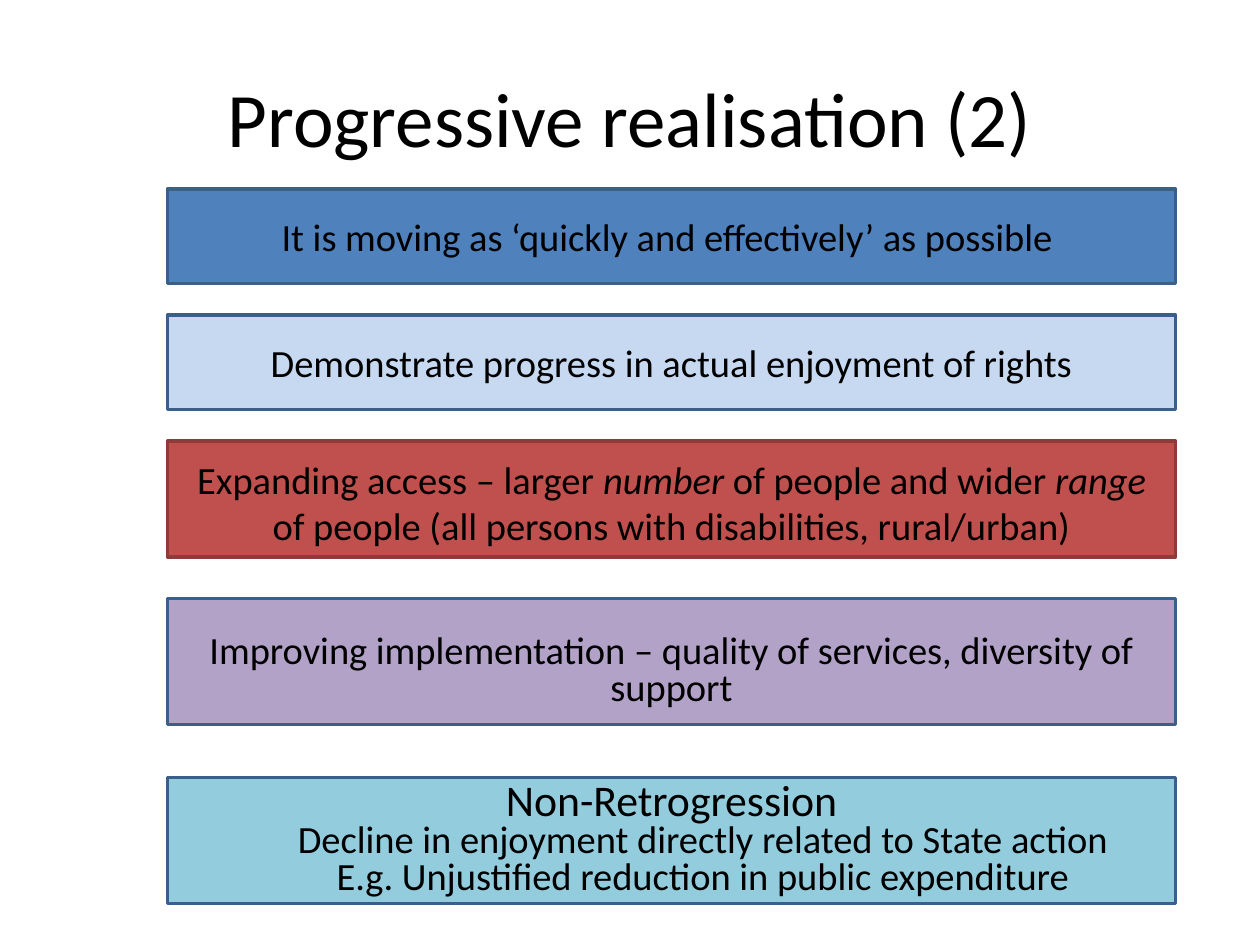
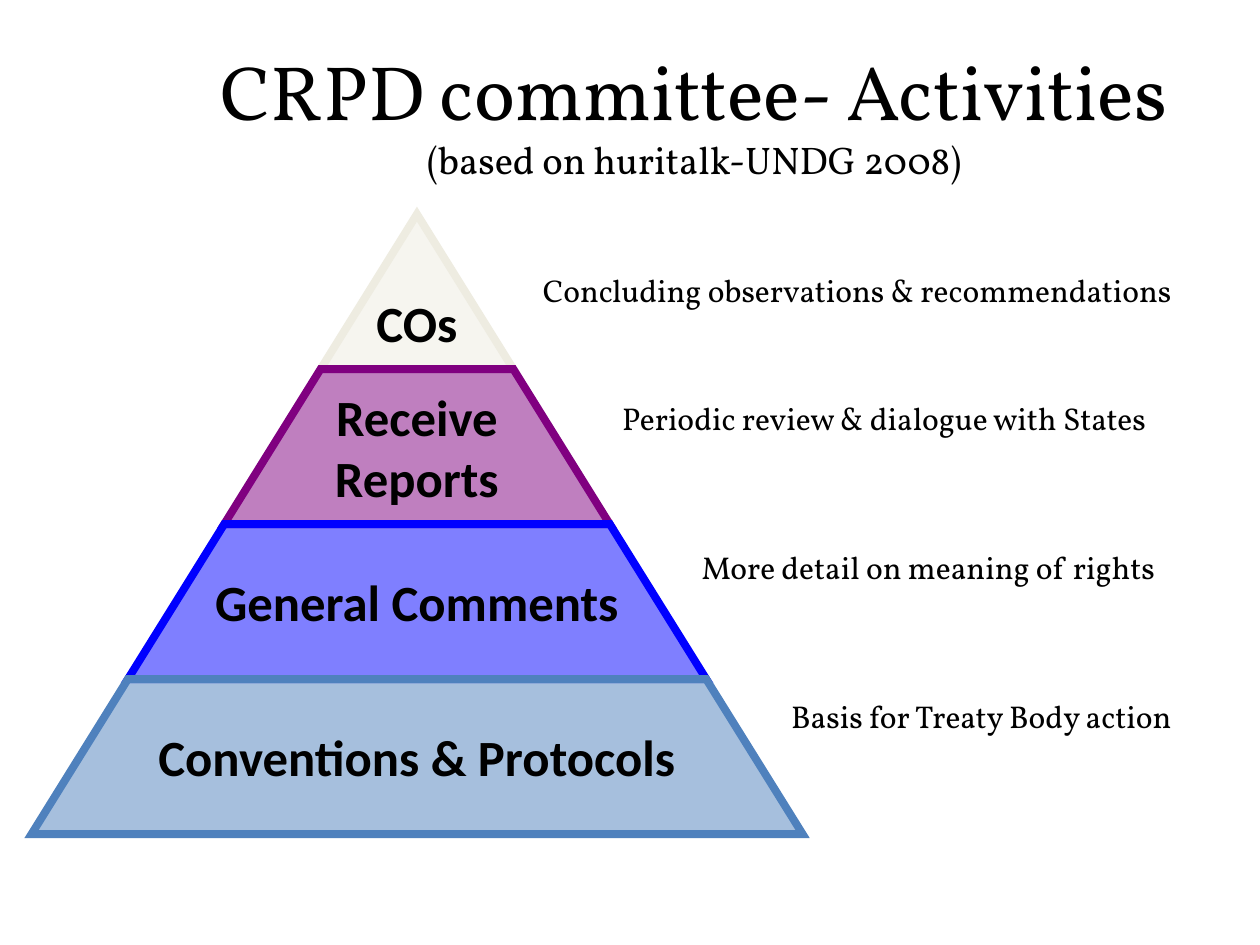
from lxml.etree import SubElement
from pptx import Presentation
from pptx.dml.color import RGBColor
from pptx.enum.shapes import MSO_SHAPE as Preset
from pptx.enum.text import MSO_ANCHOR as Anchor, PP_ALIGN as Align
from pptx.oxml.ns import qn
from pptx.util import Inches, Pt

COLORS = {
    "text": "000000", "blue": "4F81BD", "pale blue": "C6D9F1", "red": "C0504D",
    "purple": "B3A2C7", "aqua": "93CDDD", "blue edge": "3A5F8C", "red edge": "8E3B39",
    "ivory": "EEECE1", "plum": "800080", "bright blue": "0000FF",
}
SANS, SERIF = "Calibri", "Vollkorn"


class Deck:
    """Holds the shared style and the slide being filled."""

    def __init__(self):
        self.presentation = Presentation()
        self.presentation.slide_width = Inches(10)
        self.presentation.slide_height = Inches(7.5)
        self.slide = None

    def new_slide(self):
        self.slide = self.presentation.slides.add_slide(self.presentation.slide_layouts[6])

    def color(self, name):
        return RGBColor.from_string(COLORS[name])

    def fill_text(self, shape, paragraphs, font=SANS, size=22, bold=False, align=Align.CENTER,
                  anchor=Anchor.MIDDLE, spacing=None, wrap=True):
        frame = shape.text_frame
        frame.word_wrap = wrap
        frame.vertical_anchor = anchor
        for index, content in enumerate(paragraphs):
            paragraph = frame.paragraphs[0] if index == 0 else frame.add_paragraph()
            paragraph.alignment = align
            paragraph.line_spacing = spacing
            for item in [content] if isinstance(content, str) else content:
                text, changes = (item, {}) if isinstance(item, str) else item
                run = paragraph.add_run()
                run.text = text
                run.font.name = font
                run.font.size = Pt(changes.get("size", size))
                run.font.bold = bold
                run.font.italic = changes.get("italic", False)
                run.font.color.rgb = self.color("text")
        return frame

    def paint(self, shape, fill, edge, width):
        shape.shadow.inherit = False
        shape.fill.solid()
        shape.fill.fore_color.rgb = self.color(fill)
        shape.line.color.rgb = self.color(edge)
        shape.line.width = Pt(width)

    def text(self, left, top, width, height, paragraphs, **style):
        box = self.slide.shapes.add_textbox(
            Inches(left), Inches(top), Inches(width), Inches(height))
        return self.fill_text(box, paragraphs, **style)

    def title(self, left, width, paragraphs, **style):
        self.text(left, 0.3, width, 1.25, paragraphs, size=44, **style)

    def bar(self, top, height, fill, paragraphs, edge="blue edge", inset=0.05, **style):
        shape = self.slide.shapes.add_shape(
            Preset.RECTANGLE, Inches(1.33), Inches(top), Inches(8), Inches(height))
        self.paint(shape, fill, edge, 2)
        frame = self.fill_text(shape, paragraphs, **style)
        frame.margin_top = Inches(inset)
        return frame

    def tier(self, center, top, height, upper, lower, color, lines, inset=0):
        corners = [(center - lower / 2, top + height), (center - upper / 2, top),
                   (center + upper / 2, top), (center + lower / 2, top + height)]
        points = [(Inches(x), Inches(y)) for x, y in corners]
        builder = self.slide.shapes.build_freeform(*points[0])
        builder.add_line_segments(points[1:])
        shape = builder.convert_to_shape()
        self.paint(shape, color, color, 4.5)
        properties = shape._element.spPr
        tint = properties.find(qn("a:solidFill")).find(qn("a:srgbClr"))
        SubElement(tint, qn("a:alpha"), val="50000")
        SubElement(properties.find(qn("a:ln")), qn("a:miter"), lim="800000")
        frame = self.fill_text(shape, lines, size=29, bold=True, wrap=False)
        frame.margin_left = frame.margin_right = frame.margin_bottom = 0
        frame.margin_top = Inches(inset)


def progressive_realisation(deck):
    deck.new_slide()
    deck.title(0.5, 9, ["Progressive realisation (2)"])
    italic = {"italic": True}
    deck.bar(1.5, 0.75, "blue", ["It is moving as ‘quickly and effectively’ as possible "])
    deck.bar(2.5, 0.75, "pale blue", ["Demonstrate progress in actual enjoyment of rights"])
    deck.bar(3.5, 0.92, "red", [[
        "Expanding access – larger ", ("number", italic), " of people and wider ",
        ("range", italic), " of people (all persons with disabilities, rural/urban)",
    ]], edge="red edge", inset=0.1)
    deck.bar(4.75, 1, "purple", [
        "Improving implementation – quality of services, diversity of support",
    ], inset=0.21, spacing=0.8)
    frame = deck.bar(6.17, 1, "aqua", [
        [("Non-Retrogression", {"size": 25})],
        "Decline in enjoyment directly related to State action",
        "E.g. Unjustified reduction in public expenditure",
    ], spacing=0.8)
    for paragraph in frame.paragraphs[1:]:
        paragraph._p.get_or_add_pPr().set("marL", str(Inches(0.5)))


def committee_activities(deck):
    deck.new_slide()
    deck.title(1.25, 8.52, [
        "CRPD committee- Activities", [("(based on huritalk-UNDG 2008)", {"size": 22})],
    ], font=SERIF, anchor=Anchor.TOP)
    center, apex, height, step = 3.31, 1.7, 1.23, 1.53
    tiers = [
        ("ivory", ["COs"], 0.49),
        ("plum", ["Receive", "Reports"], 0),
        ("bright blue", ["General Comments"], 0),
        ("blue", ["Conventions & Protocols"], 0),
    ]
    for level, (color, lines, inset) in enumerate(tiers):
        deck.tier(center, apex + level * height, height, level * step, (level + 1) * step,
                  color, lines, inset)
    remarks = [
        (4.21, 2.1, 5.98, "Concluding observations & recommendations"),
        (4.84, 3.12, 4.96, "Periodic review & dialogue with States"),
        (5.47, 4.3, 4.25, "More detail on meaning of rights"),
        (6.18, 5.48, 4.25, "Basis for Treaty Body action"),
    ]
    for left, top, width, remark in remarks:
        deck.text(left, top, width, 0.4, [remark], font=SERIF, size=18,
                  align=Align.LEFT, anchor=Anchor.TOP)


def main():
    deck = Deck()
    progressive_realisation(deck)
    committee_activities(deck)
    deck.presentation.save("out.pptx")


if __name__ == "__main__":
    main()
